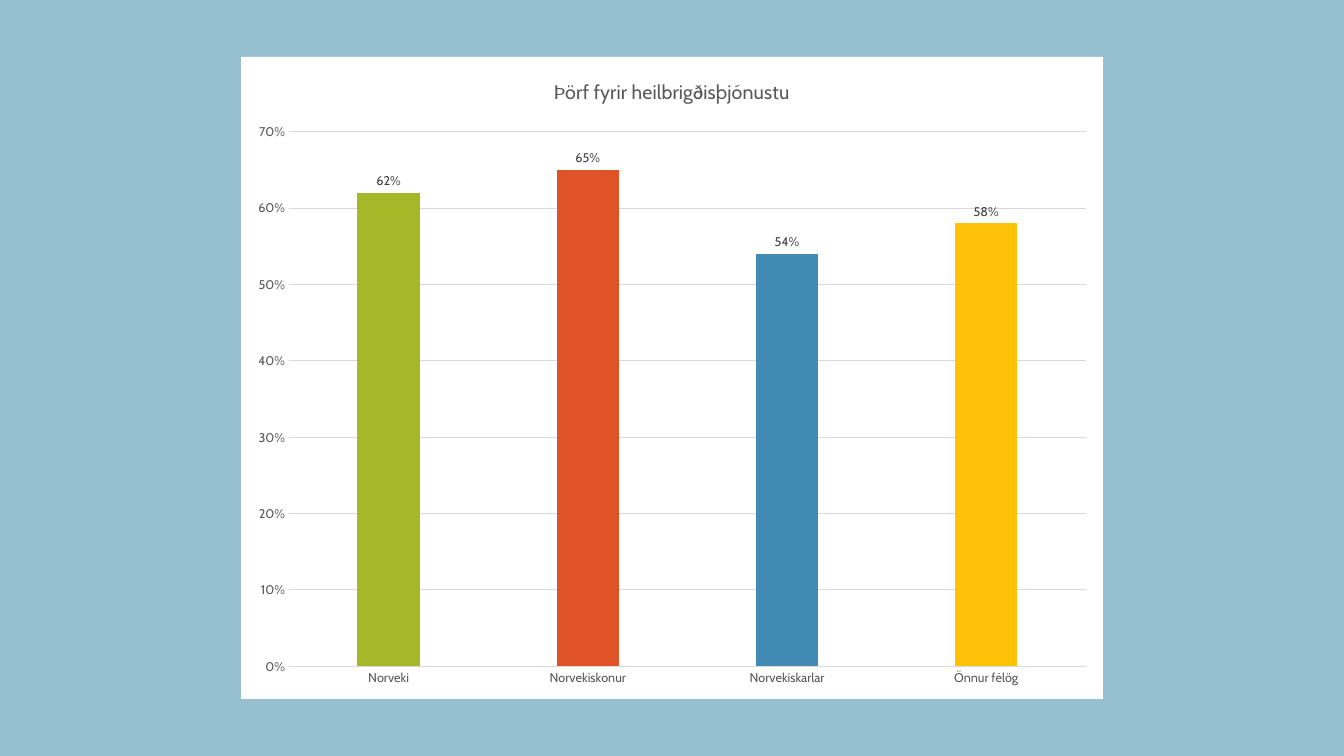
import pptx
import pptx.chart.data
import pptx.dml.color
import pptx.enum.chart
import pptx.oxml
import pptx.oxml.ns
import pptx.util

RGB = pptx.dml.color.RGBColor
SKY = RGB(0x96, 0xC0, 0xCF)
WHITE = RGB(0xFF, 0xFF, 0xFF)
BLACK = RGB(0x00, 0x00, 0x00)
GRID_GREY = RGB(0xD9, 0xD9, 0xD9)
AXIS_GREY = RGB(0x59, 0x59, 0x59)
LABEL_GREY = RGB(0x40, 0x40, 0x40)
GREEN = RGB(0xA6, 0xB7, 0x27)
ORANGE = RGB(0xDF, 0x53, 0x27)
BLUE = RGB(0x41, 0x8A, 0xB3)
YELLOW = RGB(0xFE, 0xC3, 0x06)

EMU_PER_PX = 12192000 / 1344

HEALTHCARE_NEED = {
    "Norveki": (0.62, GREEN),
    "Norvekiskonur": (0.65, ORANGE),
    "Norvekiskarlar": (0.54, BLUE),
    "Önnur félög": (0.58, YELLOW),
}


def px(length):
    return pptx.util.Emu(round(length * EMU_PER_PX))


def apply(target, values):
    for attribute, value in values.items():
        setattr(target, attribute, value)


class ChartSlide:
    font_name = "Cabin"

    def __init__(self, deck, background):
        self.slide = deck.slides.add_slide(deck.slide_layouts[6])
        fill = self.slide.background.fill
        fill.solid()
        fill.fore_color.rgb = background

    def style_text(self, font, size, color):
        apply(font, {"name": self.font_name, "size": pptx.util.Pt(size), "bold": False})
        font.color.rgb = color

    def style_line(self, line):
        line.color.rgb = GRID_GREY
        line.width = pptx.util.Pt(0.75)

    def fill_panel(self, chart, color):
        panel = pptx.oxml.parse_xml(
            f'<c:spPr {pptx.oxml.ns.nsdecls("c", "a")}>'
            f'<a:solidFill><a:srgbClr val="{color}"/></a:solidFill>'
            '<a:ln><a:noFill/></a:ln></c:spPr>'
        )
        chart.element.find(pptx.oxml.ns.qn("c:chart")).addnext(panel)

    def title(self, chart, text):
        chart.has_title = True
        frame = chart.chart_title.text_frame
        frame.text = text
        self.style_text(frame.paragraphs[0].runs[0].font, 14, AXIS_GREY)
        chart.chart_title.include_in_layout = False

    def axes(self, chart):
        no_tick = pptx.enum.chart.XL_TICK_MARK.NONE
        for axis in (chart.category_axis, chart.value_axis):
            apply(axis, {"major_tick_mark": no_tick, "minor_tick_mark": no_tick})
            self.style_text(axis.tick_labels.font, 9, AXIS_GREY)
        chart.category_axis.has_major_gridlines = False
        self.style_line(chart.category_axis.format.line)
        percent = chart.value_axis
        apply(percent, {"minimum_scale": 0, "maximum_scale": 0.7,
                        "major_unit": 0.1, "has_major_gridlines": True})
        apply(percent.tick_labels, {"number_format": "0%",
                                    "number_format_is_linked": False})
        self.style_line(percent.major_gridlines.format.line)
        percent.format.line.fill.background()

    def column_chart(self, title, groups, left, top, width, height):
        data = pptx.chart.data.CategoryChartData(number_format="0%")
        data.categories = list(groups)
        data.add_series("Series 1", [share for share, _ in groups.values()])
        chart = self.slide.shapes.add_chart(
            pptx.enum.chart.XL_CHART_TYPE.COLUMN_CLUSTERED,
            px(left), px(top), px(width), px(height), data,
        ).chart
        chart.has_legend = False
        self.style_text(chart.font, 10, BLACK)
        self.fill_panel(chart, WHITE)
        self.title(chart, title)
        self.axes(chart)

        # Columns, one colour per group
        plot = chart.plots[0]
        apply(plot, {"gap_width": 219, "overlap": -27,
                     "vary_by_categories": False, "has_data_labels": True})
        shares = plot.series[0]
        shares.format.fill.solid()
        shares.format.fill.fore_color.rgb = GREEN
        for index, (_, color) in enumerate(groups.values()):
            column_fill = shares.points[index].format.fill
            column_fill.solid()
            column_fill.fore_color.rgb = color

        # Value labels
        labels = shares.data_labels
        apply(labels, {
            "show_value": True,
            "number_format": "0%",
            "number_format_is_linked": False,
            "position": pptx.enum.chart.XL_LABEL_POSITION.OUTSIDE_END,
        })
        self.style_text(labels.font, 9, LABEL_GREY)


def main():
    deck = pptx.Presentation()
    apply(deck, {"slide_width": px(1344), "slide_height": px(756)})
    need_slide = ChartSlide(deck, SKY)
    need_slide.column_chart("Þörf fyrir heilbrigðisþjónustu", HEALTHCARE_NEED,
                            241, 57, 862, 642)
    deck.save("out.pptx")


if __name__ == "__main__":
    main()
